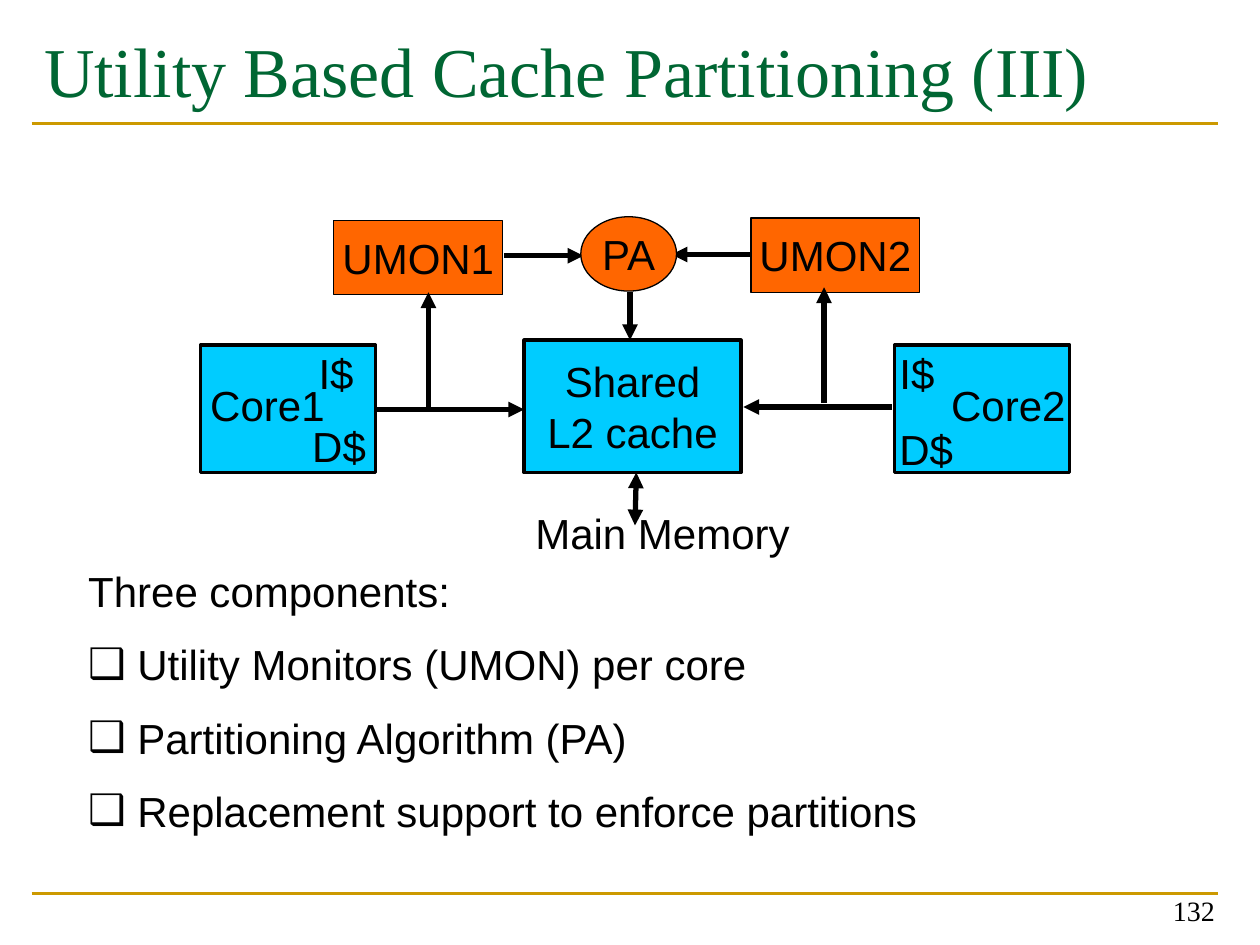
"""Build the Utility Based Cache Partitioning slide with its block diagram."""

from dataclasses import dataclass

from lxml.etree import SubElement
from pptx import Presentation
from pptx.dml.color import RGBColor
from pptx.enum.shapes import MSO_CONNECTOR as Link, MSO_SHAPE as Preset
from pptx.enum.text import MSO_ANCHOR as Anchor, MSO_AUTO_SIZE as AutoSize, PP_ALIGN as Align
from pptx.oxml.ns import qn
from pptx.util import Inches, Pt

COLORS = {"title": "006633", "rule": "CC9900", "ink": "000000", "cache": "00CCFF", "monitor": "FF6600"}
SERIF, SANS = "Times New Roman", "Arial"


@dataclass(frozen=True)
class Block:
    box: tuple[float, float, float, float]
    fill: str
    border: float
    lines: tuple[str, ...] = ()
    preset: Preset = Preset.RECTANGLE


@dataclass(frozen=True)
class Label:
    text: str
    box: tuple[float, float, float, float]


@dataclass(frozen=True)
class Arrow:
    start: tuple[float, float]
    end: tuple[float, float]
    double: bool = False


def color(name: str) -> RGBColor:
    return RGBColor.from_string(COLORS[name])


def place(shape, box: tuple[float, float, float, float]) -> None:
    shape.left, shape.top, shape.width, shape.height = map(Inches, box)


def write(paragraph, text: str, size: int = 24, face: str = SANS, ink: str = "ink", align=Align.LEFT) -> None:
    paragraph.alignment = align
    run = paragraph.add_run()
    run.text = text
    run.font.size, run.font.name = Pt(size), face
    run.font.color.rgb = color(ink)


def draw_block(slide, block: Block) -> None:
    shape = slide.shapes.add_shape(block.preset, *map(Inches, block.box))
    shape.shadow.inherit = False
    shape.fill.solid()
    shape.fill.fore_color.rgb = color(block.fill)
    shape.line.color.rgb = color("ink")
    shape.line.width = Pt(block.border)
    frame = shape.text_frame
    frame.word_wrap, frame.vertical_anchor = False, Anchor.MIDDLE
    for index, line in enumerate(block.lines):
        paragraph = frame.add_paragraph() if index else frame.paragraphs[0]
        write(paragraph, line, align=Align.CENTER)


def draw_label(slide, label: Label) -> None:
    frame = slide.shapes.add_textbox(*map(Inches, label.box)).text_frame
    frame.word_wrap = True
    write(frame.paragraphs[0], label.text)


def draw_line(slide, start: tuple[float, float], end: tuple[float, float], ink: str, width: float):
    line = slide.shapes.add_connector(Link.STRAIGHT, *map(Inches, start + end))
    line.line.color.rgb = color(ink)
    line.line.width = Pt(width)
    SubElement(line._element.spPr, qn("a:effectLst"))
    return line


def draw_arrow(slide, arrow: Arrow) -> None:
    outline = draw_line(slide, arrow.start, arrow.end, "ink", 3).line._get_or_add_ln()
    for tag in ("a:headEnd", "a:tailEnd") if arrow.double else ("a:tailEnd",):
        SubElement(outline, qn(tag), type="triangle")


def set_bullet(paragraph, symbol: str = "", hang: float = 0) -> None:
    properties = paragraph._p.get_or_add_pPr()
    properties.set("marL", str(Inches(hang)))
    properties.set("indent", str(Inches(-hang)))
    if symbol:
        SubElement(properties, qn("a:buFont"), typeface=SANS)
        SubElement(properties, qn("a:buChar"), char=symbol)
    else:
        SubElement(properties, qn("a:buNone"))


def fill_title(title) -> None:
    place(title, (0.25, 0.17, 9.42, 1.17))
    frame = title.text_frame
    frame.vertical_anchor, frame.auto_size = Anchor.TOP, AutoSize.NONE
    write(frame.paragraphs[0], "Utility Based Cache Partitioning (III)", 40, SERIF, "title")


def fill_components(body) -> None:
    place(body, (0.6, 4.44, 8.58, 2.3))
    frame = body.text_frame
    frame.auto_size = AutoSize.NONE
    intro = frame.paragraphs[0]
    intro.space_before = Pt(0)
    set_bullet(intro)
    write(intro, "Three components:")
    for component in COMPONENTS:
        item = frame.add_paragraph()
        item.space_before = Pt(13)
        set_bullet(item, "❑", 0.39)
        write(item, component)


def add_page_number(slide) -> None:
    frame = slide.shapes.add_textbox(*map(Inches, (7.41, 6.91, 2.33, 0.5))).text_frame
    frame.word_wrap, frame.vertical_anchor = True, Anchor.BOTTOM
    write(frame.paragraphs[0], "132", 16, SERIF, align=Align.RIGHT)


COMPONENTS = (
    "Utility Monitors (UMON) per core",
    "Partitioning Algorithm (PA)",
    "Replacement support to enforce partitions",
)
BLOCKS = (
    Block((1.59, 2.74, 1.39, 1.01), "cache", 2),
    Block((7.1, 2.74, 1.39, 1.01), "cache", 2),
    Block((4.16, 2.7, 1.72, 1.05), "cache", 2, ("Shared", "L2 cache")),
    Block((2.65, 1.75, 1.34, 0.59), "monitor", 0.75, ("UMON1",)),
    Block((5.96, 1.73, 1.34, 0.59), "monitor", 0.75, ("UMON2",)),
)
ALGORITHM = Block((4.61, 1.72, 0.76, 0.59), "monitor", 0.75, ("PA",), Preset.OVAL)
LABELS = (
    Label("I$", (2.43, 2.71, 0.61, 0.5)),
    Label("D$", (2.38, 3.29, 0.67, 0.5)),
    Label("Core1", (1.57, 2.96, 1.18, 0.5)),
    Label("I$", (7.04, 2.71, 0.61, 0.5)),
    Label("D$", (7.04, 3.31, 0.67, 0.5)),
    Label("Core2", (7.45, 2.96, 1.18, 0.5)),
    Label("Main Memory", (4.15, 3.98, 2.77, 0.5)),
)
ARROWS = (
    Arrow((5.05, 3.75), (5.04, 4.17), double=True),
    Arrow((2.98, 3.25), (4.16, 3.25)),
    Arrow((7.08, 3.23), (5.9, 3.23)),
    Arrow((3.4, 3.25), (3.4, 2.32)),
    Arrow((6.54, 3.2), (6.54, 2.28)),
    Arrow((4, 2.03), (4.63, 2.03)),
    Arrow((5.96, 2.02), (5.33, 2.02)),
    Arrow((5, 2.32), (5, 2.7)),
)


def main() -> None:
    deck = Presentation()
    deck.slide_width, deck.slide_height = Inches(10), Inches(7.5)
    slide = deck.slides.add_slide(deck.slide_layouts[1])
    for height in (7.09, 0.98):
        draw_line(slide, (0.25, height), (9.67, height), "rule", 1.5)
    fill_title(slide.shapes.title)
    fill_components(slide.placeholders[1])
    add_page_number(slide)
    for block in BLOCKS:
        draw_block(slide, block)
    for label in LABELS:
        draw_label(slide, label)
    for arrow in ARROWS:
        draw_arrow(slide, arrow)
    draw_block(slide, ALGORITHM)
    deck.save("out.pptx")


if __name__ == "__main__":
    main()
